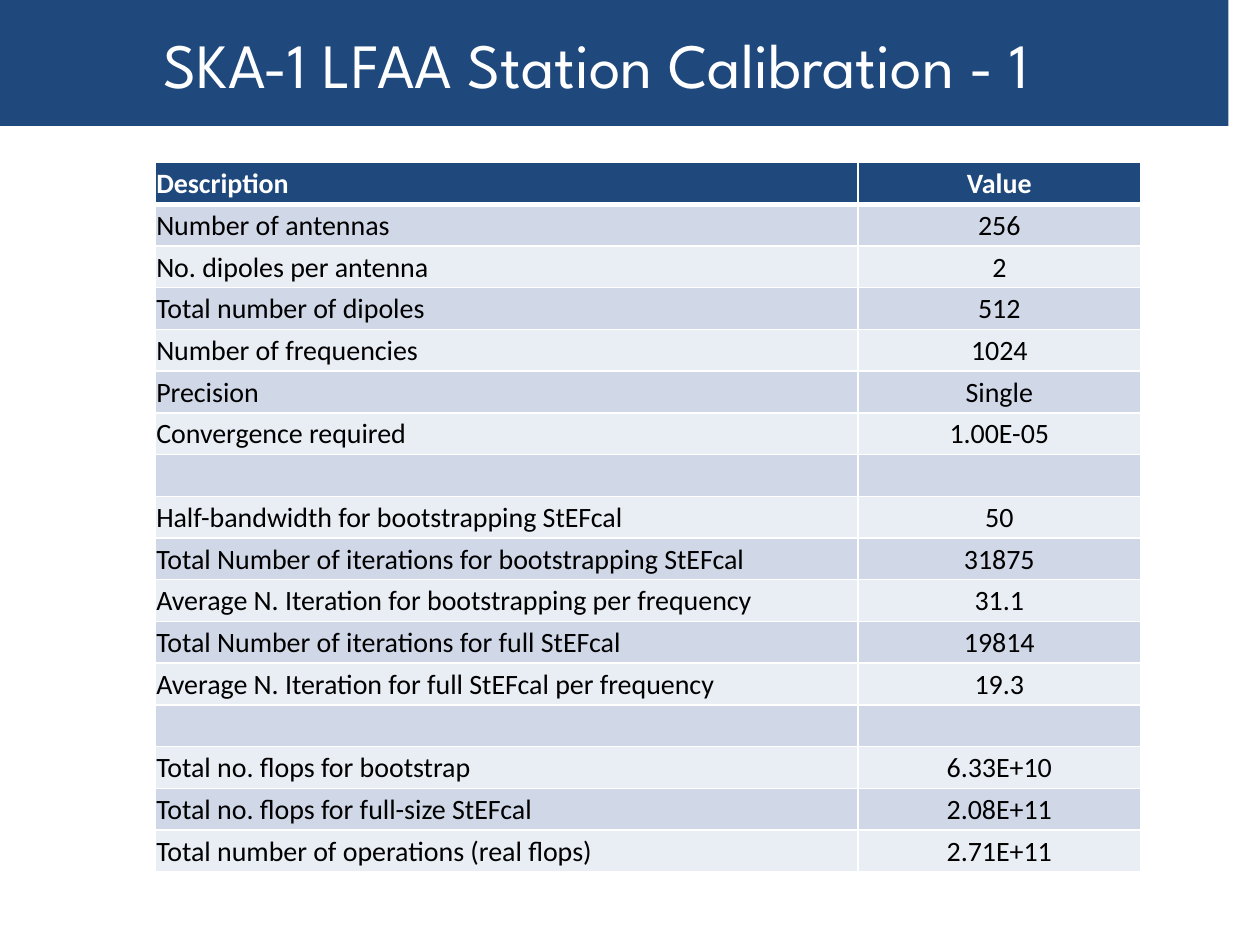
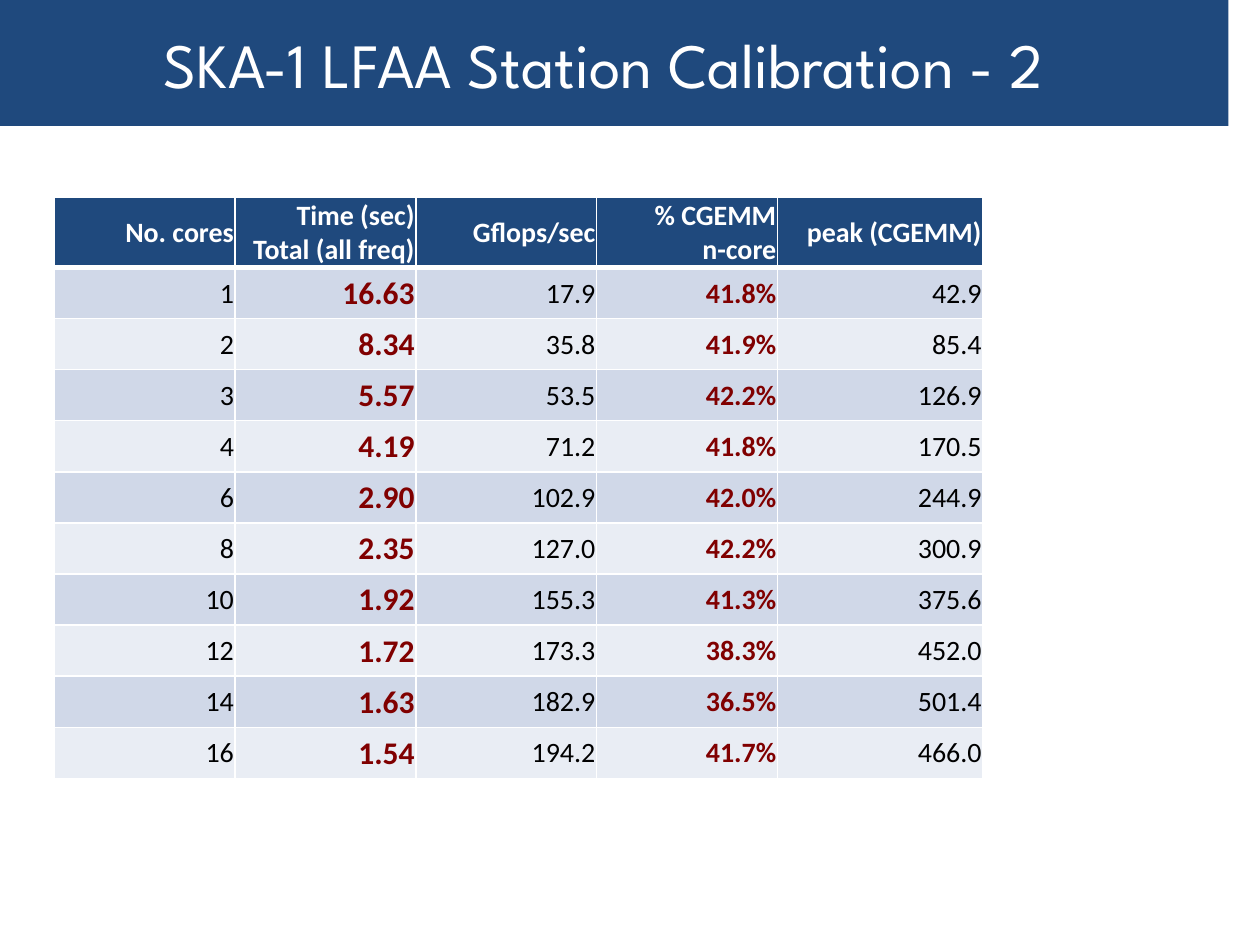
from copy import deepcopy

from lxml.etree import SubElement as Sub
from pptx import Presentation
from pptx.dml.color import RGBColor as RGB
from pptx.enum.shapes import MSO_SHAPE as Shape
from pptx.enum.text import MSO_ANCHOR as Anchor, PP_ALIGN as Align
from pptx.oxml.ns import qn
from pptx.util import Pt

NAVY = RGB(0x1F, 0x49, 0x7D)
WHITE = RGB(0xFF, 0xFF, 0xFF)
BLACK = RGB(0, 0, 0)
MAROON = RGB(0x80, 0, 0)
BANDS = RGB(0xD0, 0xD8, 0xE8), RGB(0xE9, 0xED, 0xF4)

TITLE = dict(name="League Spartan", size=Pt(36), color=WHITE)
HEAD = dict(name="Calibri", size=Pt(16), color=WHITE, bold=True)
BODY = HEAD | dict(color=BLACK, bold=False)
SHARE = HEAD | dict(color=MAROON)
TIME = SHARE | dict(size=Pt(18))

# In a cell, \n starts a paragraph and \v breaks a line.
SLIDES = [
    dict(
        title="SKA-1 LFAA Station Calibration - 1",
        left=88.6, top=92.9, height=405.3, row=23.84,
        cols=[(401.8, Align.LEFT, BODY), (161.3, Align.CENTER, BODY)],
        rows=[
            ("Description", "Value"),
            ("Number of antennas", "256"),
            ("No. dipoles per antenna", "2"),
            ("Total number of dipoles", "512"),
            ("Number of frequencies", "1024"),
            ("Precision", "Single"),
            ("Convergence required", "1.00E-05"),
            ("", ""),
            ("Half-bandwidth for bootstrapping StEFcal", "50"),
            ("Total Number of iterations for bootstrapping StEFcal", "31875"),
            ("Average N. Iteration for bootstrapping per frequency", "31.1"),
            ("Total Number of iterations for full StEFcal", "19814"),
            ("Average N. Iteration for full StEFcal per frequency", "19.3"),
            ("", ""),
            ("Total no. flops for bootstrap", "6.33E+10"),
            ("Total no. flops for full-size StEFcal", "2.08E+11"),
            ("Total number of operations (real flops)", "2.71E+11"),
        ],
    ),
    dict(
        title="SKA-1 LFAA Station Calibration - 2",
        left=31, top=113, height=331.2, row=29.2,
        cols=[(103.3, Align.RIGHT, look) for look in (BODY, TIME, BODY, SHARE)]
        + [(117.4, Align.RIGHT, BODY)],
        rows=[
            ("No. cores", "Time (sec)\nTotal (all freq)", "Gflops/sec",
             "% CGEMM\vn-core", "peak (CGEMM)"),
            ("1", "16.63", "17.9", "41.8%", "42.9"),
            ("2", "8.34", "35.8", "41.9%", "85.4"),
            ("3", "5.57", "53.5", "42.2%", "126.9"),
            ("4", "4.19", "71.2", "41.8%", "170.5"),
            ("6", "2.90", "102.9", "42.0%", "244.9"),
            ("8", "2.35", "127.0", "42.2%", "300.9"),
            ("10", "1.92", "155.3", "41.3%", "375.6"),
            ("12", "1.72", "173.3", "38.3%", "452.0"),
            ("14", "1.63", "182.9", "36.5%", "501.4"),
            ("16", "1.54", "194.2", "41.7%", "466.0"),
        ],
    ),
]


def put(item, **attrs):
    """Set several attributes on one object."""
    for key, val in attrs.items():
        setattr(item, key, val)


def style(para, look, align):
    para.alignment = align
    for run in para.runs:
        for key, val in look.items():
            if key == "color":
                run.font.color.rgb = val
            else:
                setattr(run.font, key, val)
    for gap in para._p.findall(qn("a:br")):
        gap.insert(0, deepcopy(para.runs[0]._r.rPr))


def add_title(slide, text):
    bar = slide.shapes.add_shape(Shape.RECTANGLE, 0, 0, Pt(702), Pt(72))
    bar.shadow.inherit = False
    bar.fill.solid()
    bar.fill.fore_color.rgb = NAVY
    bar.line.fill.background()
    frame = bar.text_frame
    put(frame, text=text, word_wrap=True, vertical_anchor=Anchor.MIDDLE,
        margin_left=Pt(93.6), margin_right=Pt(21.6),
        margin_top=Pt(3.6), margin_bottom=Pt(3.6))
    style(frame.paragraphs[0], TITLE, Align.LEFT)


def add_rules(cell, **widths):
    """Draw white borders on the sides named L, R, T and B."""
    props = cell._tc.get_or_add_tcPr()
    for side, width in widths.items():
        line = Sub(props, qn(f"a:ln{side}"), w=str(Pt(width)))
        Sub(Sub(line, qn("a:solidFill")), qn("a:srgbClr"), val=str(WHITE))


def add_grid(slide, left, top, height, row, cols, rows):
    wide = sum(col[0] for col in cols)
    frame = slide.shapes.add_table(
        len(rows), len(cols), Pt(left), Pt(top), Pt(wide), Pt(height))
    grid = frame.table
    for col, (width, _, _) in zip(grid.columns, cols):
        col.width = Pt(width)
    for r, texts in enumerate(rows):
        grid.rows[r].height = Pt(row)
        for c, (text, (_, align, look)) in enumerate(zip(texts, cols)):
            cell = grid.cell(r, c)
            put(cell, text=text, vertical_anchor=Anchor.MIDDLE,
                margin_left=Pt(0.7), margin_right=Pt(0.7),
                margin_top=Pt(0.7), margin_bottom=0)
            add_rules(cell, L=1, R=1, T=3 if r == 1 else 1, B=1 if r else 3)
            cell.fill.solid()
            cell.fill.fore_color.rgb = BANDS[(r - 1) % 2] if r else NAVY
            for para in cell.text_frame.paragraphs:
                style(para, look if r else HEAD, align)
    frame.height = Pt(height)


def main():
    deck = Presentation()
    put(deck, slide_width=Pt(720), slide_height=Pt(540))
    for page in SLIDES:
        slide = deck.slides.add_slide(deck.slide_layouts[6])
        add_title(slide, page["title"])
        add_grid(slide, **{k: v for k, v in page.items() if k != "title"})
    deck.save("out.pptx")


if __name__ == "__main__":
    main()
